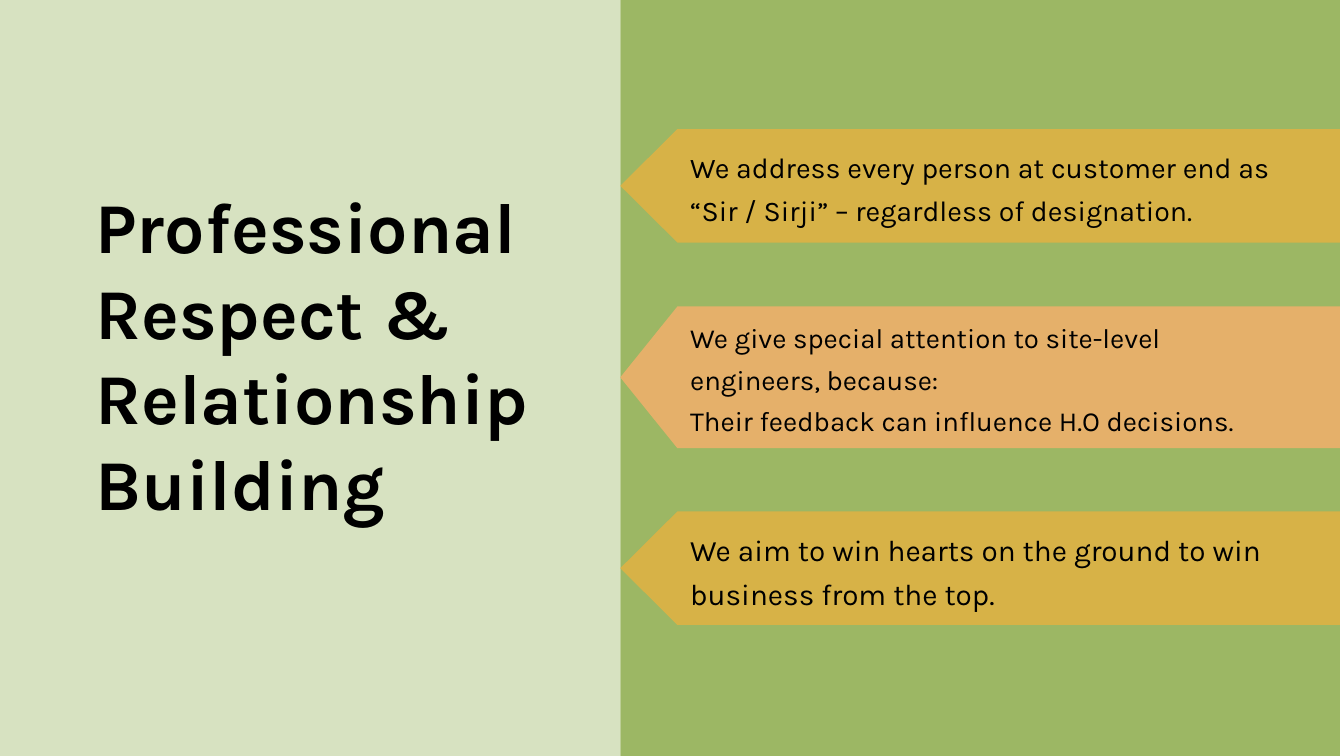
import pptx
import pptx.util
import pptx.dml.color
import pptx.enum.shapes
import pptx.enum.text
import pptx.oxml.ns
import lxml.etree

WIDTH, HEIGHT = 20, 11.25
SPLIT, RIGHT = 9.23, 19.94
PANEL_HEIGHT = 11.4
POINT_DEPTH = 0.85
TEXT_LEFT, TEXT_WIDTH = 10.27, 8.64
FONT = "Karla"
GREEN, GOLD, PEACH, BLACK = "9CB764", "E3B142", "E5B06A", "000000"

PANELS = [
    {"left": 0, "width": SPLIT, "opacity": 40},
    {"left": SPLIT, "width": RIGHT - SPLIT, "opacity": 100},
]
TITLE = {
    "lines": ["Professional Respect & Relationship Building"],
    "area": (1.42, 2.71, 6.65, 5.16),
    "size": 76.5, "spacing": 91.8, "bold": True,
}
BANNERS = [
    {"lines": ["We address every person at customer end as “Sir / Sirji” – regardless of designation."],
     "top": 1.92, "height": 1.69, "color": GOLD, "opacity": 83,
     "text_top": 2.1, "text_height": 1.24, "size": 30.6, "spacing": 46},
    {"lines": ["We give special attention to site-level engineers, because:",
               "Their feedback can influence H.O decisions."],
     "top": 4.56, "height": 2.11, "color": PEACH, "opacity": 100,
     "text_top": 4.65, "text_height": 1.81, "size": 29.6, "spacing": 44.5},
    {"lines": ["We aim to win hearts on the ground to win business from the top."],
     "top": 7.61, "height": 1.69, "color": GOLD, "opacity": 83,
     "text_top": 7.78, "text_height": 1.27, "size": 31.8, "spacing": 47.7},
]


def rgb(color):
    return pptx.dml.color.RGBColor.from_string(color)


def inches(area):
    return [pptx.util.Inches(length) for length in area]


def add_filled(page, kind, area, color, opacity):
    shape = page.shapes.add_shape(kind, *inches(area))
    shape.shadow.inherit = False
    shape.line.fill.background()
    shape.fill.solid()
    shape.fill.fore_color.rgb = rgb(color)
    if opacity < 100:
        tint = shape.fill._xPr.find(".//" + pptx.oxml.ns.qn("a:srgbClr"))
        alpha = lxml.etree.SubElement(tint, pptx.oxml.ns.qn("a:alpha"))
        alpha.set("val", str(opacity * 1000))
    return shape


def add_text(page, lines, area, size, spacing, bold=False):
    box = page.shapes.add_textbox(*inches(area))
    frame = box.text_frame
    frame_format = {
        "word_wrap": True,
        "auto_size": pptx.enum.text.MSO_AUTO_SIZE.SHAPE_TO_FIT_TEXT,
        "margin_left": 0, "margin_top": 0, "margin_right": 0, "margin_bottom": 0,
    }
    for name, value in frame_format.items():
        setattr(frame, name, value)
    font_format = {"name": FONT, "size": pptx.util.Pt(size), "bold": bold}
    for index, line in enumerate(lines):
        para = frame.add_paragraph() if index else frame.paragraphs[0]
        para.line_spacing = pptx.util.Pt(spacing)
        span = para.add_run()
        span.text = line
        span.font.color.rgb = rgb(BLACK)
        for name, value in font_format.items():
            setattr(span.font, name, value)


def add_banner(page, banner):
    area = (SPLIT, banner["top"], RIGHT - SPLIT, banner["height"])
    arrow = add_filled(page, pptx.enum.shapes.MSO_SHAPE.PENTAGON, area,
                       banner["color"], banner["opacity"])
    arrow.rotation = 180
    arrow.adjustments[0] = POINT_DEPTH / banner["height"]
    text_area = (TEXT_LEFT, banner["text_top"], TEXT_WIDTH, banner["text_height"])
    add_text(page, banner["lines"], text_area, banner["size"], banner["spacing"])


def main():
    deck = pptx.Presentation()
    deck.slide_width, deck.slide_height = inches((WIDTH, HEIGHT))
    page = deck.slides.add_slide(deck.slide_layouts[6])
    for panel in PANELS:
        area = (panel["left"], 0, panel["width"], PANEL_HEIGHT)
        add_filled(page, pptx.enum.shapes.MSO_SHAPE.RECTANGLE, area, GREEN, panel["opacity"])
    add_text(page, **TITLE)
    for banner in BANNERS:
        add_banner(page, banner)
    deck.save("out.pptx")


if __name__ == "__main__":
    main()
